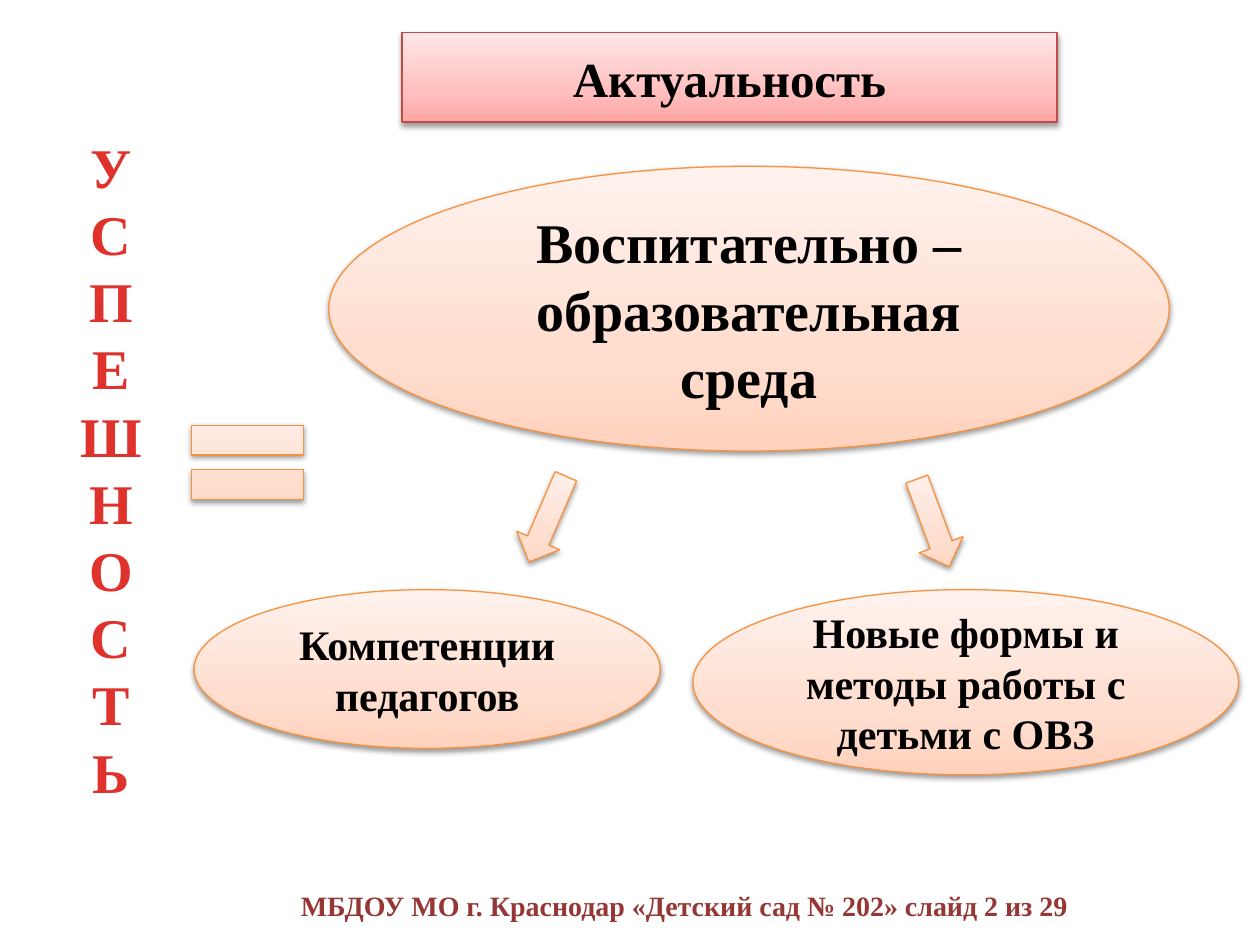
import copy

import pptx
import pptx.dml.color
import pptx.enum.shapes
import pptx.enum.text
import pptx.oxml
import pptx.oxml.ns
import pptx.util
from pptx.util import Inches

COLORS = {
    "text": "000000",
    "success": "E0322D",
    "footer": "953735",
    "title_line": "BF4C48",
    "scheme_line": "F69240",
}
GRADIENTS = {
    "title": ("FFA6A5", "FFC0BF", "FFE7E7"),
    "scheme": ("FFD2BD", "FFDED0", "FFF2ED"),
}
STOP_POSITIONS = (0, 0.35, 1)
FONT = "Times New Roman"
KINDS = pptx.enum.shapes.MSO_SHAPE
CENTER = pptx.enum.text.PP_ALIGN.CENTER
LEFT = pptx.enum.text.PP_ALIGN.LEFT


def rgb(name):
    """Return a named colour."""
    return pptx.dml.color.RGBColor.from_string(COLORS[name])


def fill_gradient(shape, palette):
    """Fill a shape with three stops running from bottom to top."""
    shape.fill.gradient()
    shape.fill.gradient_angle = 90
    stop_list = shape.element.spPr.find(".//" + pptx.oxml.ns.qn("a:gsLst"))
    stop_list.append(copy.deepcopy(stop_list[0]))
    stops = shape.fill.gradient_stops
    for stop, position, color in zip(stops, STOP_POSITIONS, GRADIENTS[palette]):
        stop.position = position
        stop.color.rgb = pptx.dml.color.RGBColor.from_string(color)


def add_shadow(shape):
    """Give a shape a soft shadow falling downwards."""
    shape.shadow.inherit = False
    effects = shape.element.spPr.find(pptx.oxml.ns.qn("a:effectLst"))
    effects.append(pptx.oxml.parse_xml(
        f'<a:outerShdw {pptx.oxml.ns.nsdecls("a")} blurRad="40000" dist="20000" '
        'dir="5400000" rotWithShape="0"><a:srgbClr val="000000">'
        '<a:alpha val="38000"/></a:srgbClr></a:outerShdw>'))


def decorate(shape, palette):
    """Apply the gradient, outline and shadow of a palette."""
    fill_gradient(shape, palette)
    shape.line.color.rgb = rgb(palette + "_line")
    shape.line.width = pptx.util.Pt(0.75)
    add_shadow(shape)


def write(shape, text, size, color="text", align=CENTER):
    """Write bold text, one paragraph per line."""
    shape.text_frame.text = text
    for paragraph in shape.text_frame.paragraphs:
        paragraph.alignment = align
        paragraph.font.name = FONT
        paragraph.font.size = pptx.util.Pt(size)
        paragraph.font.bold = True
        paragraph.font.color.rgb = rgb(color)


def add_title(slide, text):
    """Turn the title placeholder into the heading banner."""
    title = slide.shapes.title
    title.left, title.top = Inches(3.19), Inches(0.26)
    title.width, title.height = Inches(5.2), Inches(0.71)
    decorate(title, "title")
    write(title, text, 28)
    title.text_frame.vertical_anchor = pptx.enum.text.MSO_ANCHOR.MIDDLE


def add_sign(slide, kind, left, top, width, height, rotation=0):
    """Add an arrow or an equals sign of the scheme."""
    sign = slide.shapes.add_shape(
        kind, Inches(left), Inches(top), Inches(width), Inches(height))
    sign.rotation = rotation
    decorate(sign, "scheme")


def add_oval(slide, text, size, left, top, width, height):
    """Add an oval with a concept of the scheme."""
    oval = slide.shapes.add_shape(
        KINDS.OVAL, Inches(left), Inches(top), Inches(width), Inches(height))
    decorate(oval, "scheme")
    write(oval, text, size)
    oval.text_frame.vertical_anchor = pptx.enum.text.MSO_ANCHOR.MIDDLE


def add_label(slide, text, size, color, align, left, top, width, height):
    """Add a text box that does not wrap and return it."""
    label = slide.shapes.add_textbox(
        Inches(left), Inches(top), Inches(width), Inches(height))
    label.text_frame.word_wrap = False
    label.text_frame.auto_size = pptx.enum.text.MSO_AUTO_SIZE.SHAPE_TO_FIT_TEXT
    write(label, text, size, color, align)
    return label


def main():
    """Build the slide and save it."""
    presentation = pptx.Presentation()
    presentation.slide_width, presentation.slide_height = Inches(10), Inches(7.5)
    slide = presentation.slides.add_slide(presentation.slide_layouts[5])

    add_title(slide, "Актуальность")
    add_sign(slide, KINDS.MATH_EQUAL, 1.36, 3.17, 1.21, 1)
    add_sign(slide, KINDS.DOWN_ARROW, 4.16, 3.75, 0.37, 0.74, 23.3)
    add_sign(slide, KINDS.DOWN_ARROW, 7.22, 3.78, 0.37, 0.74, 339.7)
    add_oval(slide, "Воспитательно – образовательная среда", 32,
             2.61, 1.32, 6.67, 2.26)
    success = add_label(slide, "\n".join("УСПЕШНОСТЬ"), 32, "success", CENTER,
                        0.53, 1, 0.7, 5.49)
    for letter in success.text_frame.paragraphs:
        letter.runs[0].font._element.set("spc", "50")
    add_oval(slide, "Компетенции педагогов", 24, 1.54, 4.68, 3.7, 1.26)
    add_oval(slide, "Новые формы и методы работы с детьми с ОВЗ", 24,
             5.5, 4.68, 4.33, 1.47)
    add_label(slide, "МБДОУ МО г. Краснодар «Детский сад № 202» слайд 2 из 29",
              16, "footer", LEFT, 2.29, 7, 6.43, 0.37)

    presentation.save("out.pptx")


if __name__ == "__main__":
    main()
